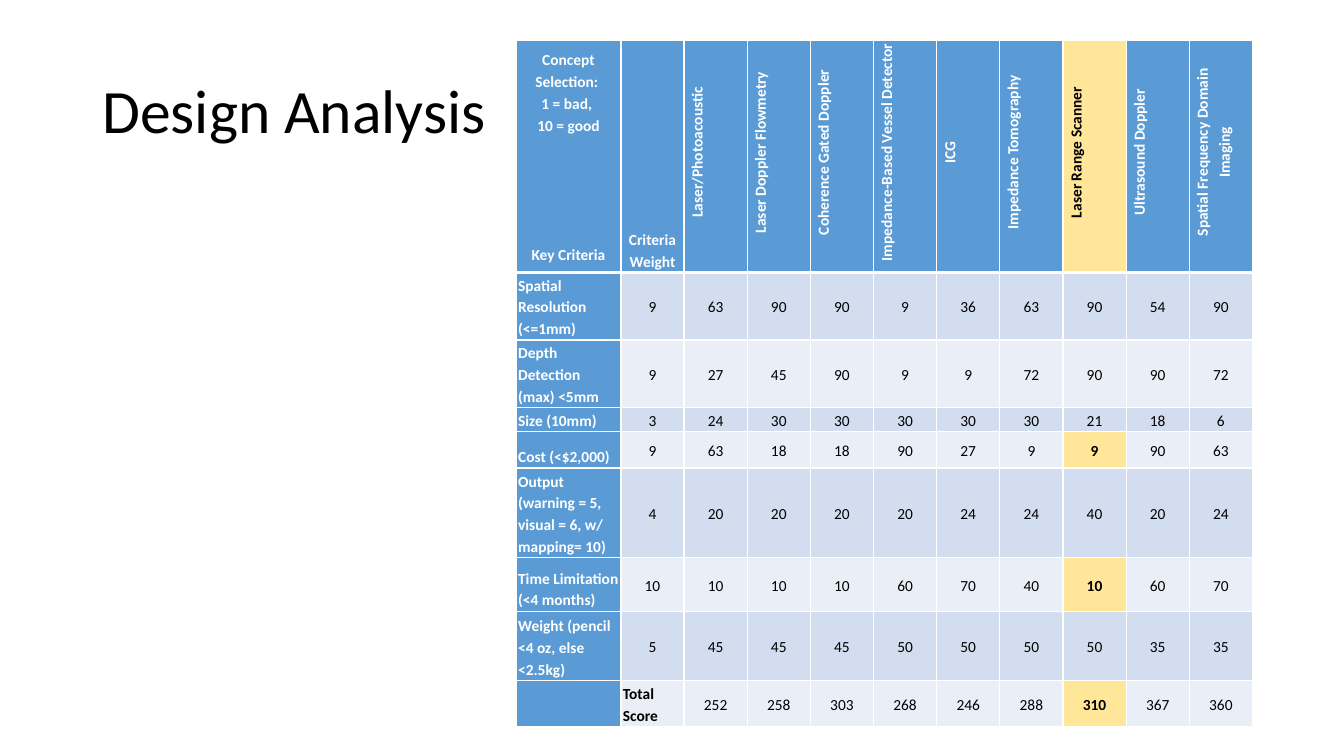
from lxml.etree import SubElement
from pptx import Presentation
from pptx.dml.color import RGBColor
from pptx.enum.text import MSO_ANCHOR, PP_ALIGN
from pptx.oxml.ns import qn
from pptx.util import Inches, Pt

BLUE, GOLD, WHITE, BLACK = "5B9BD5", "FFE699", "FFFFFF", "000000"
BANDS = "EAEFF7", "D2DEEF"
KEY_HEADING = "Concept Selection: \n1 = bad, \n10 = good\nKey Criteria"
CONCEPTS = [
    "Laser/Photoacoustic", "Laser Doppler Flowmetry", "Coherence Gated Doppler",
    "Impedance-Based Vessel Detector", "ICG", "Impedance Tomography",
    "Laser Range Scanner", "Ultrasound Doppler", "Spatial Frequency Domain Imaging",
]
SCORES = [
    ["Spatial Resolution (<=1mm)", 9, 63, 90, 90, 9, 36, 63, 90, 54, 90],
    ["Depth Detection (max) <5mm", 9, 27, 45, 90, 9, 9, 72, 90, 90, 72],
    ["Size (10mm)", 3, 24, 30, 30, 30, 30, 30, 21, 18, 6],
    ["Cost (<$2,000)", 9, 63, 18, 18, 90, 27, 9, 9, 90, 63],
    ["Output (warning = 5, visual = 6, w/ mapping= 10)",
     4, 20, 20, 20, 20, 24, 24, 40, 20, 24],
    ["Time Limitation (<4 months)", 10, 10, 10, 10, 60, 70, 40, 10, 60, 70],
    ["Weight (pencil <4 oz, else <2.5kg)", 5, 45, 45, 45, 50, 50, 50, 50, 35, 35],
    ["", "Total Score", 252, 258, 303, 268, 246, 288, 310, 367, 360],
]
MATRIX = [[KEY_HEADING, "Criteria Weight"] + CONCEPTS] + SCORES
COLUMN_SHARES = [7.8] + [4.7] * 10
ROW_SHARES = [29.07, 8.93, 8.93, 3.2, 4.8, 11.87, 7.07, 9.2, 6.13]
TOTAL_ROW = len(MATRIX) - 1
HIGHLIGHTS = {(row, 8) for row in (0, 4, 6, TOTAL_ROW)}


def color(value):
    return RGBColor.from_string(value)


class Deck:
    font = "Calibri"

    def __init__(self):
        self.file = Presentation()
        self.file.slide_width, self.file.slide_height = Inches(13.33), Inches(7.5)
        self.slide = self.file.slides.add_slide(self.file.slide_layouts[6])

    def across(self, share):
        return int(self.file.slide_width * share / 100)

    def down(self, share):
        return int(self.file.slide_height * share / 100)

    def area(self, left, top, width, height):
        return self.across(left), self.down(top), self.across(width), self.down(height)

    def style(self, paragraph, size, ink, spacing, bold=False):
        paragraph.line_spacing = spacing
        for run in paragraph.runs:
            run.font.name, run.font.size, run.font.bold = self.font, Pt(size), bold
            run.font.color.rgb = color(ink)

    def title(self, words, *area):
        heading = self.slide.shapes.add_textbox(*self.area(*area)).text_frame
        heading.word_wrap = True
        heading.vertical_anchor = MSO_ANCHOR.MIDDLE
        heading.text = words
        self.style(heading.paragraphs[0], 44, BLACK, 0.9)

    def table(self, matrix, left, top):
        area = self.area(left, top, sum(COLUMN_SHARES), sum(ROW_SHARES))
        grid = self.slide.shapes.add_table(len(matrix), len(matrix[0]), *area).table
        grid.first_row = grid.horz_banding = False
        for column, share in zip(grid.columns, COLUMN_SHARES):
            column.width = self.across(share)
        for row, share in zip(grid.rows, ROW_SHARES):
            row.height = self.down(share)
        for r, entries in enumerate(matrix):
            for c, entry in enumerate(entries):
                self.cell(grid.cell(r, c), r, c, str(entry))
        return grid

    def cell(self, cell, r, c, words):
        heading = r == 0 or c == 0
        total_label = (r, c) == (TOTAL_ROW, 1)
        chosen = (r, c) in HIGHLIGHTS
        left_aligned = total_label or (c == 0 and r > 0)
        self.borders(cell, 3 if r == 1 else 1, 3 if r == 0 else 1)
        cell.fill.solid()
        fill = GOLD if chosen else BLUE if heading else BANDS[r % 2]
        cell.fill.fore_color.rgb = color(fill)
        cell.margin_left = cell.margin_right = Inches(0.02)
        cell.margin_top = cell.margin_bottom = Inches(0.01)
        low = left_aligned or (r, c) == (0, 1)
        cell.vertical_anchor = MSO_ANCHOR.BOTTOM if low else MSO_ANCHOR.MIDDLE
        cell.text_frame.text = words
        ink = WHITE if heading and not chosen else BLACK
        for paragraph in cell.text_frame.paragraphs:
            paragraph.alignment = PP_ALIGN.LEFT if left_aligned else PP_ALIGN.CENTER
            self.style(paragraph, 11, ink, 1.15, heading or chosen or total_label)
        if (r, c) == (0, 0):
            cell.text_frame.paragraphs[-1].space_before = Pt(77)
        if r == 0 and c > 1:
            cell._tc.get_or_add_tcPr().set("vert", "vert270")
            indent = cell.text_frame.paragraphs[0]._p.get_or_add_pPr()
            indent.set("marL", str(Inches(0.08)))

    def borders(self, cell, top, bottom):
        properties = cell._tc.get_or_add_tcPr()
        for side, width in zip("LRTB", (1, 1, top, bottom)):
            line = SubElement(properties, qn(f"a:ln{side}"), w=str(Pt(width)))
            paint = SubElement(line, qn("a:solidFill"))
            SubElement(paint, qn("a:srgbClr"), val=WHITE)


def main():
    deck = Deck()
    deck.table(MATRIX, 38.4, 5.33)
    deck.title("Design Analysis", 6.88, 5.33, 86.25, 19.33)
    deck.file.save("out.pptx")


if __name__ == "__main__":
    main()
